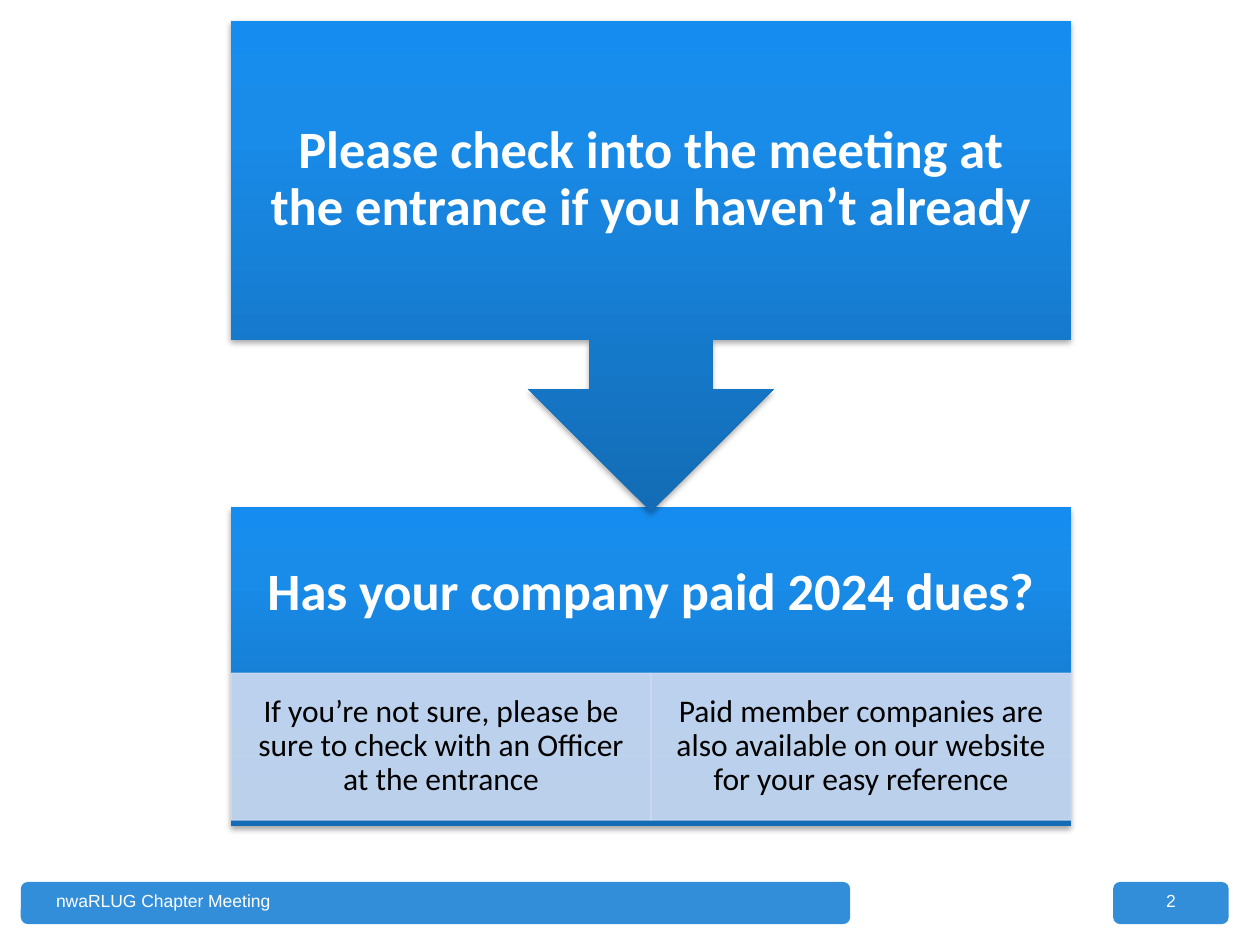
from dataclasses import dataclass

from lxml import etree
from pptx import Presentation
from pptx import util as u
from pptx.dml.color import RGBColor
from pptx.enum import shapes, text
from pptx.oxml import parse_xml
from pptx.oxml.ns import qn

NS = 'xmlns:a="http://schemas.openxmlformats.org/drawingml/2006/main"'


@dataclass(frozen=True)
class Theme:
    gradient: tuple = ((0, "136CB5"), (80, "198CEA"), (100, "158DF0"))
    detail: str = "CEDBF1"
    detail_opacity: int = 90
    footer: str = "338ED9"
    light: str = "FFFFFF"
    dark: str = "000000"
    body_font: str = "Calibri"
    footer_font: str = "Arial"
    heading_size: int = 30
    detail_size: int = 18
    footer_size: int = 10


THEME = Theme()


def add_block(slide, preset, box):
    block = slide.shapes.add_shape(preset, *(u.Cm(v) for v in box))
    block.shadow.inherit = False
    block.line.fill.background()
    return block


def paint_raised(block):
    """Vertical gradient, dark at the foot, with a soft shadow below."""
    stops = "".join(
        f'<a:gs pos="{pos * 1000}"><a:srgbClr val="{color}"/></a:gs>'
        for pos, color in THEME.gradient)
    props = block._element.spPr
    props.find(qn("a:prstGeom")).addnext(parse_xml(
        f'<a:gradFill {NS} rotWithShape="1"><a:gsLst>{stops}</a:gsLst>'
        '<a:lin ang="16200000" scaled="0"/></a:gradFill>'))
    props.find(qn("a:effectLst")).append(parse_xml(
        f'<a:outerShdw {NS} blurRad="40000" dist="23000" dir="5400000" '
        'rotWithShape="0"><a:srgbClr val="000000"><a:alpha val="35000"/>'
        '</a:srgbClr></a:outerShdw>'))


def set_opacity(fill_parent):
    for color in fill_parent.iter(qn("a:srgbClr")):
        etree.SubElement(color, qn("a:alpha"),
                         val=str(THEME.detail_opacity * 1000))


def write(block, words, size, color, font=THEME.body_font, bold=False,
          inset=(0.58, 0.58), anchor=text.MSO_ANCHOR.MIDDLE,
          align=text.PP_ALIGN.CENTER, spacing=0.9):
    frame = block.text_frame
    frame.word_wrap = True
    frame.vertical_anchor = anchor
    frame.margin_left = frame.margin_right = u.Cm(inset[0])
    frame.margin_top = frame.margin_bottom = u.Cm(inset[1])
    paragraph = frame.paragraphs[0]
    paragraph.text = words
    paragraph.alignment = align
    paragraph.line_spacing = spacing
    paragraph.font.name = font
    paragraph.font.size = u.Pt(size)
    paragraph.font.bold = bold
    paragraph.font.color.rgb = RGBColor.from_string(color)


def add_dues_panel(slide, box, question, details):
    left, top, width, height = box
    panel = add_block(slide, shapes.MSO_SHAPE.RECTANGLE, box)
    paint_raised(panel)

    # Question across the upper part
    heading = slide.shapes.add_textbox(
        u.Cm(left), u.Cm(top), u.Cm(width), u.Cm(height * 0.54))
    write(heading, question, THEME.heading_size, THEME.light, bold=True)

    # Equal detail cells below it
    cell_width = width / len(details)
    for i, detail in enumerate(details):
        cell = add_block(slide, shapes.MSO_SHAPE.RECTANGLE,
                         (left + i * cell_width, top + height * 0.52,
                          cell_width, height * 0.46))
        cell.fill.solid()
        cell.fill.fore_color.rgb = RGBColor.from_string(THEME.detail)
        cell.line.color.rgb = RGBColor.from_string(THEME.detail)
        cell.line.width = u.Pt(0.75)
        set_opacity(cell._element.spPr)
        write(cell, detail, THEME.detail_size, THEME.dark, inset=(0.36, 0.08))


def add_check_in(slide, box, message):
    callout = add_block(slide, shapes.MSO_SHAPE.DOWN_ARROW_CALLOUT, box)
    paint_raised(callout)
    write(callout, message, THEME.heading_size, THEME.light, bold=True)


def add_footer_bar(slide, box, words, align, side_inset):
    bar = add_block(slide, shapes.MSO_SHAPE.ROUNDED_RECTANGLE, box)
    bar.fill.solid()
    bar.fill.fore_color.rgb = RGBColor.from_string(THEME.footer)
    write(bar, words, THEME.footer_size, THEME.light, THEME.footer_font,
          inset=(side_inset, 0.13), anchor=text.MSO_ANCHOR.TOP,
          align=align, spacing=1.0)


def main():
    deck = Presentation()
    deck.slide_width, deck.slide_height = u.Cm(25.4), u.Cm(19.05)
    slide = deck.slides.add_slide(deck.slide_layouts[6])

    # Footer
    add_footer_bar(slide, (22.44, 17.78, 2.33, 0.85), "2",
                   text.PP_ALIGN.CENTER, 0.25)
    add_footer_bar(slide, (0.42, 17.78, 16.72, 0.85),
                   "nwaRLUG Chapter Meeting", text.PP_ALIGN.LEFT, 0.67)

    # Two steps, the arrow tip overlapping the second
    add_dues_panel(
        slide, (4.66, 10.23, 16.93, 6.43), "Has your company paid 2024 dues?",
        ("If you’re not sure, please be sure to check with an Officer "
         "at the entrance",
         "Paid member companies are also available on our website "
         "for your easy reference"))
    add_check_in(
        slide, (4.66, 0.42, 16.93, 9.9),
        "Please check into the meeting at the entrance if you haven’t already")

    deck.save("out.pptx")


if __name__ == "__main__":
    main()
